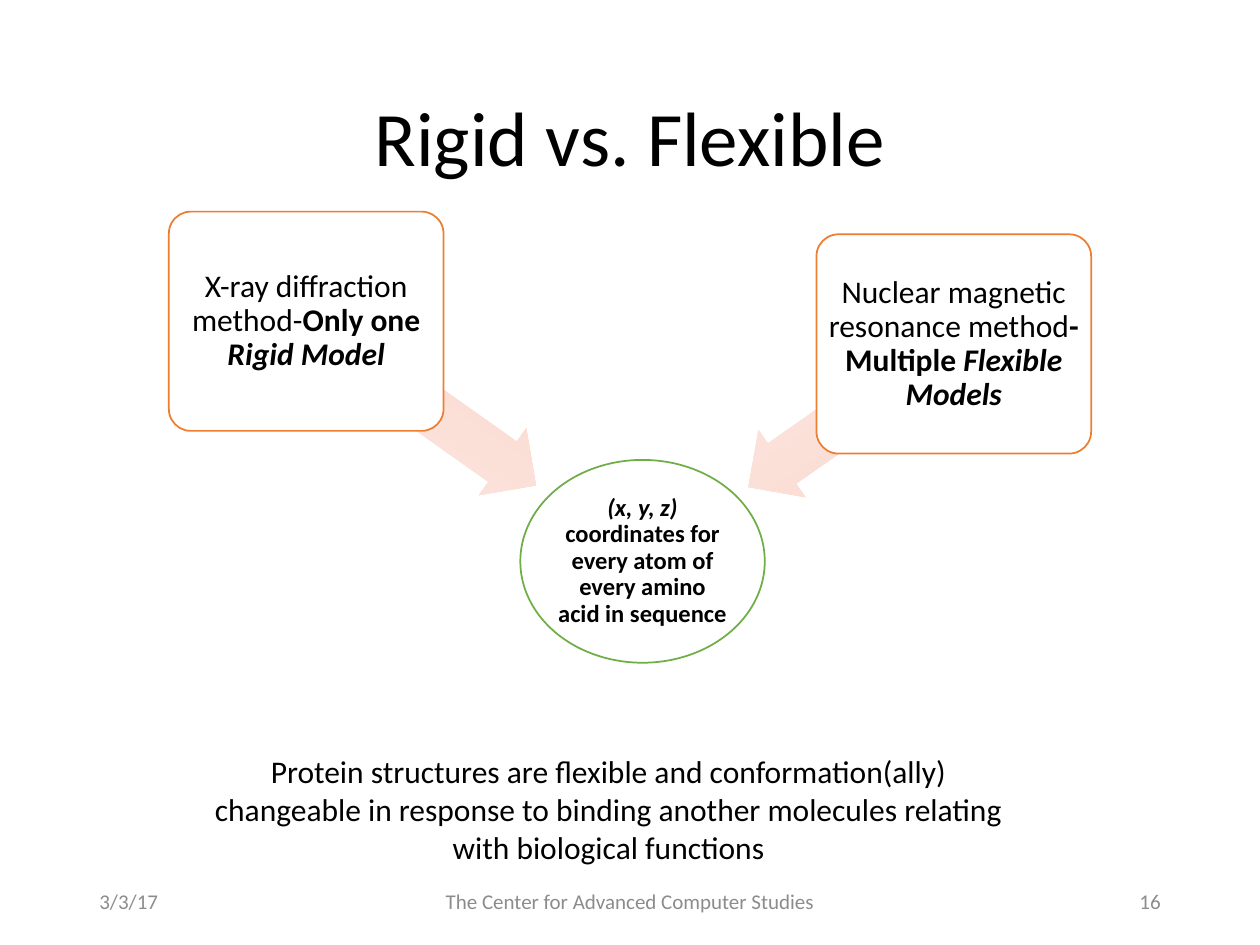
from pptx import Presentation
from pptx.dml.color import RGBColor
from pptx.enum.shapes import MSO_SHAPE
from pptx.enum.text import MSO_ANCHOR, PP_ALIGN
from pptx.util import Inches, Pt

LEFT, CENTER, RIGHT = PP_ALIGN.LEFT, PP_ALIGN.CENTER, PP_ALIGN.RIGHT
TOP, MIDDLE = MSO_ANCHOR.TOP, MSO_ANCHOR.MIDDLE
ELLIPSE, ROUNDED = MSO_SHAPE.OVAL, MSO_SHAPE.ROUNDED_RECTANGLE
LEFT_ARROW = MSO_SHAPE.LEFT_ARROW

BLACK = RGBColor(0x00, 0x00, 0x00)
WHITE = RGBColor(0xFF, 0xFF, 0xFF)
GRAY = RGBColor(0x8C, 0x8C, 0x8C)
GREEN = RGBColor(0x70, 0xAD, 0x47)
ORANGE = RGBColor(0xED, 0x7D, 0x31)
PALE_PEACH = RGBColor(0xFC, 0xE8, 0xE2)
PEACH = RGBColor(0xFA, 0xD7, 0xCC)

PLAIN = {}
BOLD = {"bold": True}
BOLD_ITALIC = {"bold": True, "italic": True}


class SlideBuilder:
    font_name = "Calibri"

    def __init__(self, slide):
        self.slide = slide

    def fill_text(self, frame, paragraphs, size, color=BLACK, align=CENTER,
                  anchor=MIDDLE, spacing=1.0, inset=None):
        layout = {"word_wrap": True, "vertical_anchor": anchor}
        if inset is not None:
            for side in ("left", "right", "top", "bottom"):
                layout[f"margin_{side}"] = Inches(inset)
        for name, value in layout.items():
            setattr(frame, name, value)
        for index, pieces in enumerate(paragraphs):
            paragraph = frame.add_paragraph() if index else frame.paragraphs[0]
            paragraph.alignment = align
            paragraph.line_spacing = spacing
            for words, emphasis in pieces:
                run = paragraph.add_run()
                run.text = words
                run.font.color.rgb = color
                style = {"name": self.font_name, "size": Pt(size), **emphasis}
                for name, value in style.items():
                    setattr(run.font, name, value)

    def text(self, box, lines, size, **options):
        label = self.slide.shapes.add_textbox(*map(Inches, box))
        self.fill_text(label.text_frame, [[(line, PLAIN)] for line in lines],
                       size, **options)

    def node(self, kind, box, outline, pieces, size, inset):
        node = self.slide.shapes.add_shape(kind, *map(Inches, box))
        node.shadow.inherit = False
        if kind == ROUNDED:
            node.adjustments[0] = 0.1
        node.fill.solid()
        node.fill.fore_color.rgb = WHITE
        node.line.color.rgb = outline
        node.line.width = Pt(1)
        self.fill_text(node.text_frame, [pieces], size, spacing=0.9, inset=inset)

    def arrow(self, box, rotation):
        arrow = self.slide.shapes.add_shape(LEFT_ARROW, *map(Inches, box))
        arrow.shadow.inherit = False
        arrow.rotation = rotation
        arrow.adjustments[0] = 0.6
        arrow.adjustments[1] = 0.5
        arrow.line.fill.background()
        arrow.fill.gradient()
        arrow.fill.gradient_angle = 270
        for stop, color in zip(arrow.fill.gradient_stops, (PALE_PEACH, PEACH)):
            stop.color.rgb = color


def main():
    deck = Presentation()
    deck.slide_width, deck.slide_height = Inches(10), Inches(7.5)
    builder = SlideBuilder(deck.slides.add_slide(deck.slide_layouts[6]))

    builder.text((0.69, 0.4, 8.62, 1.45), ["Rigid vs. Flexible"], 44, spacing=0.9)

    coordinates = [
        ("(x, y, z)", BOLD_ITALIC),
        (" coordinates for every atom of every amino acid in sequence", BOLD),
    ]
    builder.node(ELLIPSE, (4.13, 3.65, 1.94, 1.61), GREEN, coordinates, 14, 0.01)

    methods = [
        ((2.22, 2.88, 2.24, 0.65), 215.3, (1.34, 1.68),
         [("X-ray diffraction method-", PLAIN), ("Only one ", BOLD),
          ("Rigid Model", BOLD_ITALIC)]),
        ((5.76, 2.97, 1.99, 0.65), 325, (6.48, 1.86),
         [("Nuclear magnetic resonance method", PLAIN), ("- Multiple ", BOLD),
          ("Flexible Models", BOLD_ITALIC)]),
    ]
    for arrow_box, rotation, corner, pieces in methods:
        builder.arrow(arrow_box, rotation)
        builder.node(ROUNDED, (*corner, 2.18, 1.74), ORANGE, pieces, 18, 0.04)

    conclusion = [
        "Protein structures are flexible and conformation(ally)",
        "changeable in response to binding another molecules relating",
        "with biological functions",
    ]
    builder.text((1.07, 5.92, 7.52, 1.01), conclusion, 18, anchor=TOP)

    footer = [
        (3.31, 3.38, "The Center for Advanced Computer Studies", CENTER),
        (0.69, 2.25, "3/3/17", LEFT),
        (7.06, 2.25, "16", RIGHT),
    ]
    for left, width, words, align in footer:
        builder.text((left, 6.95, width, 0.4), [words], 12, color=GRAY, align=align)

    deck.save("out.pptx")


if __name__ == "__main__":
    main()
